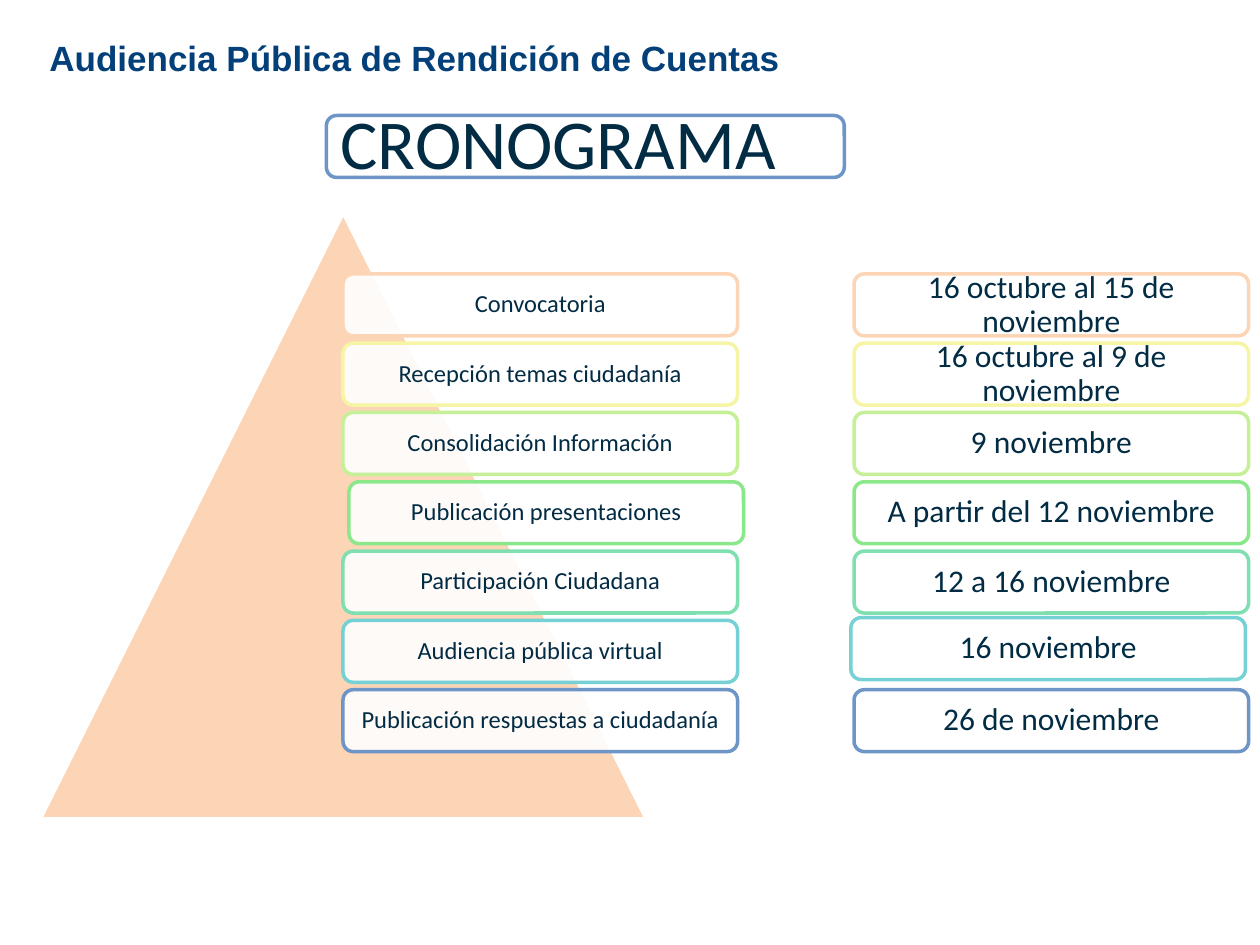
from dataclasses import dataclass

from lxml.etree import SubElement
from pptx import Presentation
from pptx.dml.color import RGBColor
from pptx.enum.shapes import MSO_SHAPE
from pptx.enum.text import MSO_ANCHOR, PP_ALIGN
from pptx.oxml.ns import qn
from pptx.util import Pt


@dataclass(frozen=True)
class Theme:
    """Colours, fonts and type sizes of the slide."""
    title_color: str = "033F78"
    ink: str = "022B44"
    paper: str = "FFFFFF"
    peach: str = "FBD5B5"
    blue: str = "6D96C7"
    step_colors: tuple = ("FBD5B5", "F6F4A5", "C5F097", "8AE88A", "7FDFB0", "75D1D4", "6D96C7")
    title_font: str = "Arial"
    body_font: str = "Calibri"
    title_size: int = 20
    banner_size: int = 40
    activity_size: int = 14
    date_size: int = 18
    outline: int = 2
    card_opacity: int = 90


@dataclass(frozen=True)
class Box:
    """A rectangle in points."""
    left: float
    top: float
    width: float
    height: float

    def lengths(self):
        """Return the four sides as slide lengths."""
        return Pt(self.left), Pt(self.top), Pt(self.width), Pt(self.height)


THEME = Theme()
ROW_PITCH = 39.6
CARD_HEIGHT = 35.4
ACTIVITIES = [
    "Convocatoria",
    "Recepción temas ciudadanía",
    "Consolidación Información",
    "Publicación presentaciones",
    "Participación Ciudadana",
    "Audiencia pública virtual",
    "Publicación respuestas a ciudadanía",
]
DATES = [
    "16 octubre al 15 de noviembre",
    "16 octubre al 9 de noviembre",
    "9 noviembre",
    "A partir del 12 noviembre",
    "12 a 16 noviembre",
    "16 noviembre",
    "26 de noviembre",
]


def style_shape(shape, fill, outline):
    """Give a shape a flat fill and outline."""
    shape.shadow.inherit = False
    shape.fill.solid()
    shape.fill.fore_color.rgb = RGBColor.from_string(fill)
    shape.line.color.rgb = RGBColor.from_string(outline)
    shape.line.width = Pt(THEME.outline)


def add_card(slide, box, wording, size, outline, insets=(5, 5)):
    """Add a translucent rounded card with centred wording."""
    card = slide.shapes.add_shape(MSO_SHAPE.ROUNDED_RECTANGLE, *box.lengths())
    style_shape(card, THEME.paper, outline)
    color = card.fill._xPr.find(qn("a:solidFill"))[0]
    SubElement(color, qn("a:alpha")).set("val", str(THEME.card_opacity * 1000))
    frame = card.text_frame
    frame.word_wrap = True
    frame.vertical_anchor = MSO_ANCHOR.MIDDLE
    frame.margin_left, frame.margin_right = (Pt(inset) for inset in insets)
    frame.margin_top = frame.margin_bottom = Pt(5)
    paragraph = frame.paragraphs[0]
    paragraph.text = wording
    paragraph.alignment = PP_ALIGN.CENTER
    paragraph.line_spacing = 0.9
    paragraph.font.name = THEME.body_font
    paragraph.font.size = Pt(size)
    paragraph.font.color.rgb = RGBColor.from_string(THEME.ink)


def place_title(slide, box, wording):
    """Move and format the title placeholder."""
    title = slide.shapes.title
    title.left, title.top, title.width, title.height = box.lengths()
    title.text_frame.vertical_anchor = MSO_ANCHOR.TOP
    paragraph = title.text_frame.paragraphs[0]
    paragraph.text = wording
    paragraph.alignment = PP_ALIGN.LEFT
    paragraph.font.name = THEME.title_font
    paragraph.font.size = Pt(THEME.title_size)
    paragraph.font.bold = True
    paragraph.font.color.rgb = RGBColor.from_string(THEME.title_color)


def add_pyramid(slide, box):
    """Add the triangle behind the activities."""
    pyramid = slide.shapes.add_shape(MSO_SHAPE.ISOSCELES_TRIANGLE, *box.lengths())
    style_shape(pyramid, THEME.peach, THEME.paper)


def add_schedule_column(slide, box, entries, size, nudges):
    """Stack one card per entry, shifting the rows listed in nudges."""
    for row, (entry, color) in enumerate(zip(entries, THEME.step_colors)):
        shift_x, shift_y = nudges.get(row, (0, 0))
        top = box.top + row * ROW_PITCH + shift_y
        card_box = Box(box.left + shift_x, top, box.width, CARD_HEIGHT)
        add_card(slide, card_box, entry, size, color)


def main():
    """Build and save the schedule slide."""
    deck = Presentation()
    deck.slide_width, deck.slide_height = Pt(720), Pt(540)
    slide = deck.slides.add_slide(deck.slide_layouts[5])
    column_height = (len(ACTIVITIES) - 1) * ROW_PITCH + CARD_HEIGHT
    place_title(slide, Box(21, 17.5, 525.5, 55.5), "Audiencia Pública de Rendición de Cuentas")
    add_card(slide, Box(186.5, 66, 296, 35.4), "CRONOGRAMA", THEME.banner_size, THEME.blue, (0, 31))
    add_pyramid(slide, Box(23, 121.7, 346.3, 346.3))
    add_schedule_column(slide, Box(196, 156.5, 225.5, column_height), ACTIVITIES,
                        THEME.activity_size, {3: (3.4, 0)})
    add_schedule_column(slide, Box(488, 156.5, 225.5, column_height), DATES,
                        THEME.date_size, {5: (-1.8, -1.6)})
    deck.save("out.pptx")


if __name__ == "__main__":
    main()
